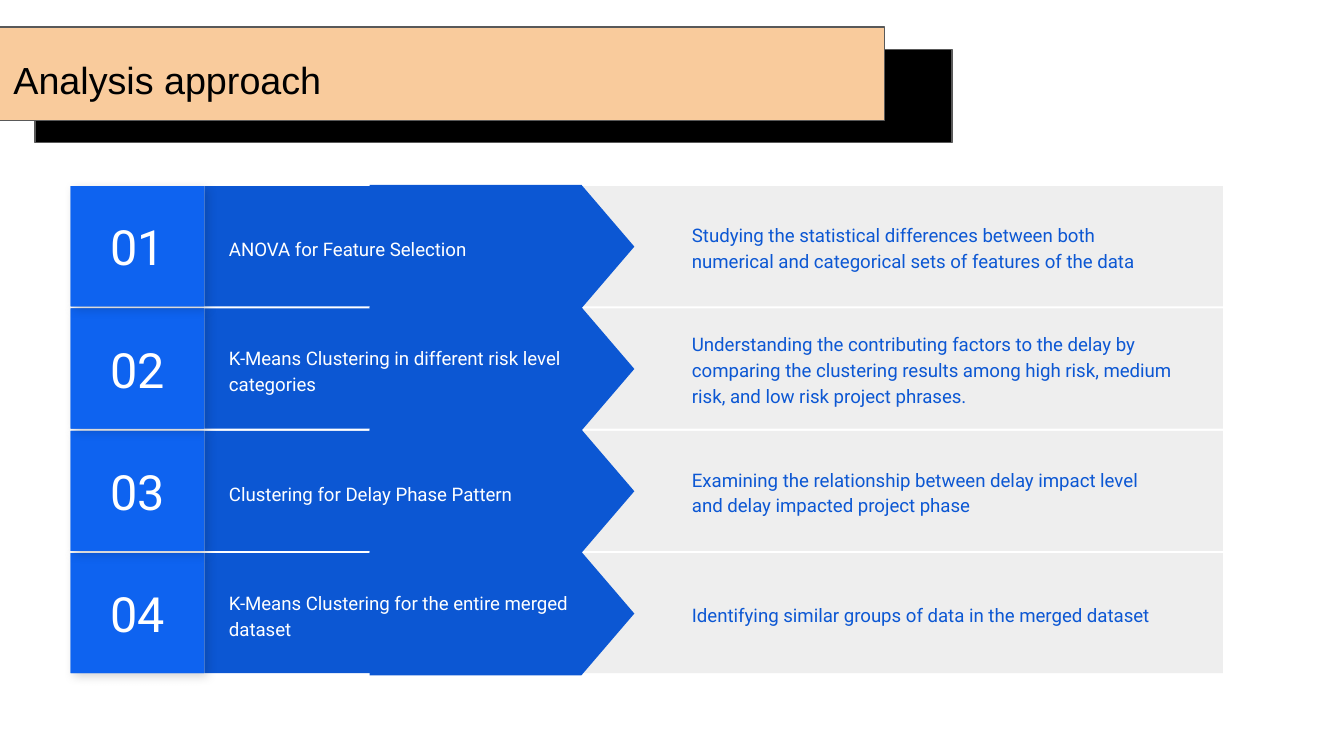
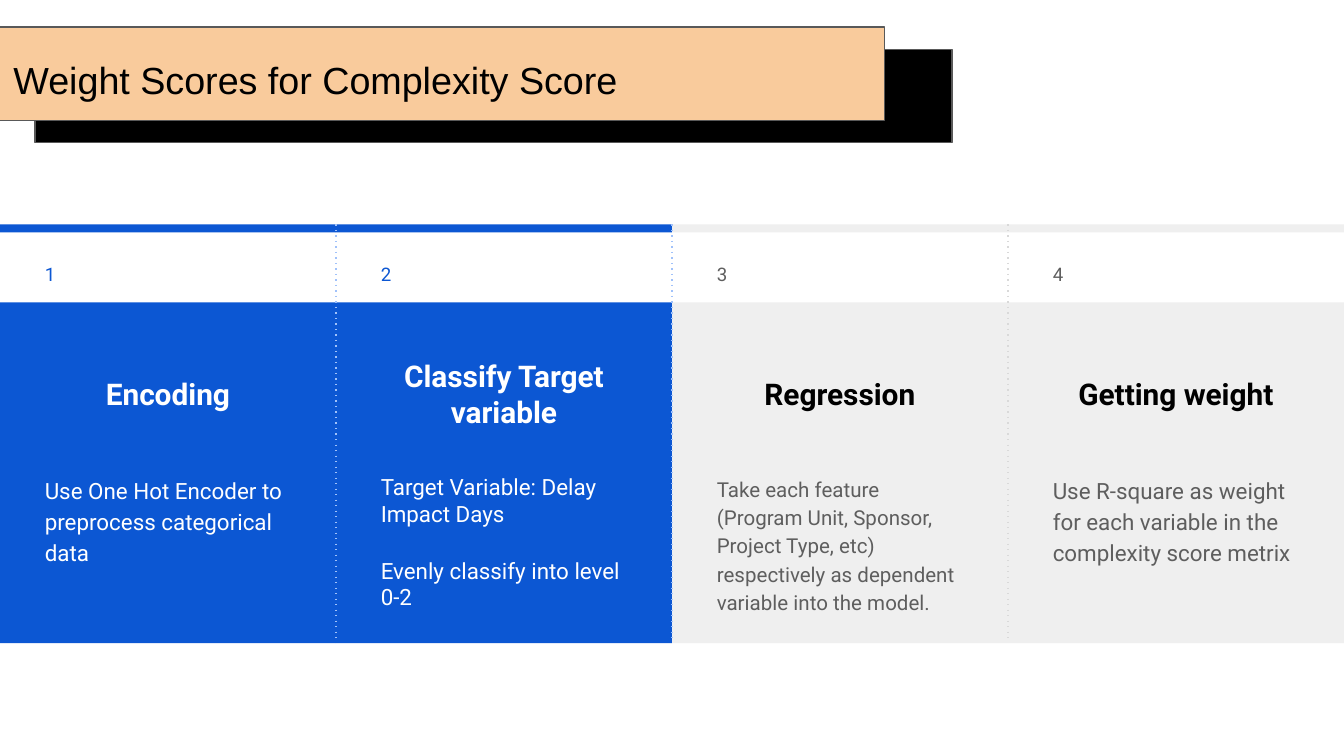
from dataclasses import dataclass

from lxml import etree
from pptx import Presentation
from pptx import util as u
from pptx.dml.color import RGBColor
from pptx.enum import dml, shapes, text
from pptx.oxml.ns import qn

PX = 4572  # EMU in one px, 200 px to the inch
SLIDE_WIDTH, SLIDE_HEIGHT = 2000, 1125
TITLE_FONT, BODY_FONT = "Arial", "Roboto"
INSET = 20
TITLE_ONLY = 5

COLORS = {
    "black": "000000",
    "white": "FFFFFF",
    "peach": "F9CB9C",
    "outline": "595959",
    "blue": "0C57D3",
    "bright": "0E63F0",
    "under": "0D5CDF",
    "pale": "EEEEEE",
    "panel": "EFEFEF",
    "grey": "5E5E5E",
    "dots_blue": "A1C2FA",
    "dots_grey": "D9D9D9",
}


@dataclass(frozen=True)
class Box:
    left: int
    top: int
    width: int
    height: int

    def emu(self) -> tuple[int, ...]:
        return tuple(v * PX for v in (self.left, self.top, self.width, self.height))


@dataclass(frozen=True)
class TextStyle:
    size: float
    color: str
    font: str = BODY_FONT
    bold: bool = False
    align: text.PP_ALIGN = text.PP_ALIGN.LEFT
    anchor: text.MSO_ANCHOR = text.MSO_ANCHOR.TOP
    line_spacing: float = 1.0
    space_before: int = 0
    space_after: int = 0
    indent: int = 0


@dataclass(frozen=True)
class Step:
    label: str
    description: str


@dataclass(frozen=True)
class Theme:
    panel: str
    number: str
    heading: str
    body: str
    divider: str


@dataclass(frozen=True)
class Stage:
    heading: str
    paragraphs: tuple[str, ...]
    theme: Theme
    size: int = 12
    line_spacing: float = 1.15
    space_before: int = 0
    space_after: int = 16


CENTER, MIDDLE = text.PP_ALIGN.CENTER, text.MSO_ANCHOR.MIDDLE
DONE = Theme("blue", "blue", "white", "white", "dots_blue")
NEXT = Theme("panel", "grey", "black", "grey", "dots_grey")

TITLE_STYLE = TextStyle(20.2, "black", TITLE_FONT)
NUMBER_STYLE = TextStyle(26, "white", align=CENTER, anchor=MIDDLE)
LABEL_STYLE = TextStyle(10, "white", anchor=MIDDLE, line_spacing=1.15)
DESCRIPTION_STYLE = TextStyle(10, "blue", anchor=MIDDLE, line_spacing=1.15, indent=100)

STEPS = (
    Step("ANOVA for Feature Selection",
         "Studying the statistical differences between both numerical and "
         "categorical sets of features of the data"),
    Step("K-Means Clustering in different risk level categories",
         "Understanding the contributing factors to the delay by comparing the "
         "clustering results among high risk, medium risk, and low risk project phrases."),
    Step("Clustering for Delay Phase Pattern",
         "Examining the relationship between delay impact level and delay "
         "impacted project phase"),
    Step("K-Means Clustering for the entire merged dataset",
         "Identifying similar groups of data in the merged dataset"),
)

STAGES = (
    Stage("Encoding", ("Use One Hot Encoder to preprocess categorical data",), DONE),
    Stage("Classify Target variable",
          ("Target Variable: Delay Impact Days", "Evenly classify into level 0-2"),
          DONE, line_spacing=1.0, space_before=16, space_after=0),
    Stage("Regression",
          ("Take each feature (Program Unit, Sponsor, Project Type, etc) "
           "respectively as dependent variable into the model.",), NEXT, size=11),
    Stage("Getting weight",
          ("Use R-square as weight for each variable in the complexity score metrix",), NEXT),
)


# Drawing helpers
def rgb(name: str) -> RGBColor:
    return RGBColor.from_string(COLORS[name])


def write(shape, paragraphs: tuple[str, ...], style: TextStyle) -> None:
    frame = shape.text_frame
    frame.word_wrap = True
    frame.auto_size = text.MSO_AUTO_SIZE.NONE
    frame.vertical_anchor = style.anchor
    frame.margin_left = frame.margin_right = INSET * PX
    frame.margin_top = frame.margin_bottom = INSET * PX
    for index, content in enumerate(paragraphs):
        paragraph = frame.add_paragraph() if index else frame.paragraphs[0]
        paragraph.text = content
        paragraph.alignment = style.align
        paragraph.line_spacing = style.line_spacing
        paragraph.space_before = u.Pt(style.space_before if index else 0)
        paragraph.space_after = u.Pt(style.space_after)
        if style.indent:
            paragraph._p.get_or_add_pPr().set("marL", str(style.indent * PX))
        paragraph.font.name = style.font
        paragraph.font.size = u.Pt(style.size)
        paragraph.font.bold = style.bold
        paragraph.font.color.rgb = rgb(style.color)


def add_block(parent, box: Box, fill: str, outline: str = "",
              kind=shapes.MSO_SHAPE.RECTANGLE):
    shape = parent.add_shape(kind, *box.emu())
    shape.shadow.inherit = False
    shape.fill.solid()
    shape.fill.fore_color.rgb = rgb(fill)
    if outline:
        shape.line.color.rgb = rgb(outline)
        shape.line.width = u.Pt(0.75)
    else:
        shape.line.fill.background()
    return shape


def add_text(parent, box: Box, style: TextStyle, *paragraphs: str) -> None:
    write(parent.add_textbox(*box.emu()), paragraphs, style)


def add_soft_shadow(shape) -> None:
    effects = shape.element.spPr.find(qn("a:effectLst"))
    shadow = etree.SubElement(effects, qn("a:outerShdw"), blurRad=str(u.Pt(5.6)),
                              dist=str(u.Pt(2.2)), dir="2700000", rotWithShape="0")
    color = etree.SubElement(shadow, qn("a:srgbClr"), val=COLORS["black"])
    etree.SubElement(color, qn("a:alpha"), val="17000")


def add_divider(parent, x: int, top: int, bottom: int, color: str) -> None:
    line = parent.add_connector(shapes.MSO_CONNECTOR.STRAIGHT,
                                x * PX, top * PX, x * PX, bottom * PX)
    line.line.color.rgb = rgb(color)
    line.line.width = u.Pt(0.75)
    line.line.dash_style = dml.MSO_LINE.ROUND_DOT
    properties = line.element.spPr
    properties.find(f"{qn('a:ln')}/{qn('a:prstDash')}").set("val", "dot")
    etree.SubElement(properties, qn("a:effectLst"))


# Shared banner and title
def add_titled_slide(presentation, title_text: str):
    slide = presentation.slides.add_slide(presentation.slide_layouts[TITLE_ONLY])
    add_block(slide.shapes, Box(52, 74, 1365, 138), "black", "outline")
    add_block(slide.shapes, Box(-49, 40, 1365, 139), "peach", "outline")
    title = slide.shapes.title
    title.left, title.top, title.width, title.height = Box(0, 64, 1864, 126).emu()
    write(title, (title_text,), TITLE_STYLE)
    slide.shapes.element.append(title.element)  # bring in front of the banner
    return slide


# Approach slide: one numbered arrow per row
def add_step(slide, index: int, step: Step) -> None:
    top, height = 277 + 182 * index, 179
    parent = slide.shapes.add_group_shape().shapes
    add_block(parent, Box(720, top, 1100, height), "pale")
    add_block(parent, Box(304, top, 530, height), "blue")
    arrow = add_block(parent, Box(655, top - 107, 184, 394), "blue",
                      kind=shapes.MSO_SHAPE.FLOWCHART_OFFPAGE_CONNECTOR)
    arrow.rotation = 270
    add_text(parent, Box(321, top + 22, 558, 138), LABEL_STYLE, step.label)
    square = Box(105, top, 199, height)
    add_soft_shadow(add_block(parent, square, "under"))
    write(add_block(parent, square, "bright"), (f"{index + 1:02}",), NUMBER_STYLE)
    add_text(parent, Box(910, top, 855, height), DESCRIPTION_STYLE, step.description)


# Weight slide: one column per stage
def add_stage(slide, index: int, stage: Stage) -> None:
    width, theme = SLIDE_WIDTH // len(STAGES), stage.theme
    left = width * index
    inner = left + 47
    parent = slide.shapes.add_group_shape().shapes
    add_block(parent, Box(left, 450, width, 507), theme.panel)
    add_block(parent, Box(left, 334, width, 12), theme.panel)
    add_text(parent, Box(inner, 366, 190, 56),
             TextStyle(10, theme.number, line_spacing=1.15, space_after=16),
             str(index + 1))
    add_text(parent, Box(inner, 499, 406, 174),
             TextStyle(16, theme.heading, bold=True, align=CENTER, anchor=MIDDLE),
             stage.heading)
    add_text(parent, Box(inner, 684, 406, 218),
             TextStyle(stage.size, theme.body, line_spacing=stage.line_spacing,
                       space_before=stage.space_before, space_after=stage.space_after),
             *stage.paragraphs)
    if index < len(STAGES) - 1:
        add_divider(parent, left + width, 334, 954, theme.divider)


def main() -> None:
    presentation = Presentation()
    presentation.slide_width = SLIDE_WIDTH * PX
    presentation.slide_height = SLIDE_HEIGHT * PX

    approach = add_titled_slide(presentation, "Analysis approach")
    for index, step in reversed(list(enumerate(STEPS))):
        add_step(approach, index, step)

    weights = add_titled_slide(presentation, "Weight Scores for Complexity Score")
    for index, stage in reversed(list(enumerate(STAGES))):
        add_stage(weights, index, stage)

    presentation.save("out.pptx")


if __name__ == "__main__":
    main()
